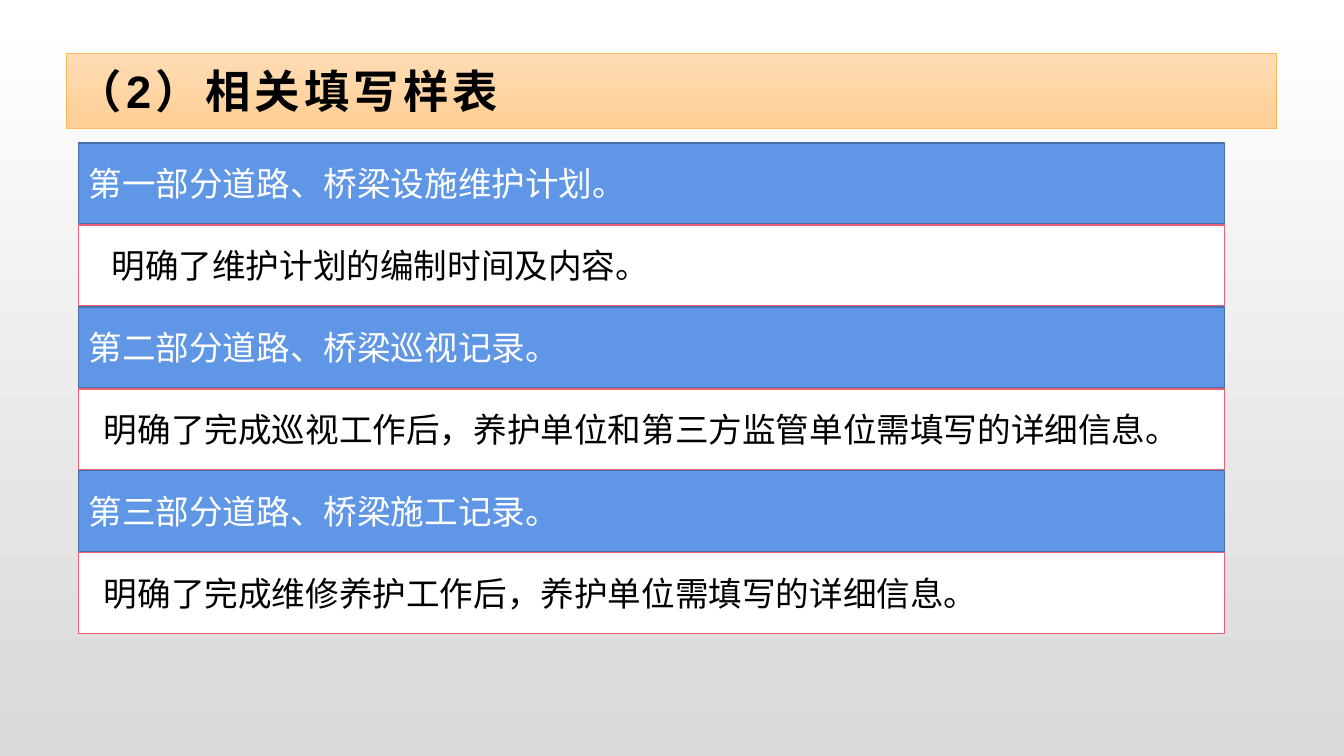
from dataclasses import dataclass

from pptx import Presentation
from pptx.dml.color import RGBColor
from pptx.enum.shapes import MSO_SHAPE
from pptx.enum.text import MSO_ANCHOR, PP_ALIGN
from pptx.util import Pt


@dataclass(frozen=True)
class Theme:
    font: str = "Arial"
    title_size: float = 32.4
    body_size: float = 24
    white: str = "FFFFFF"
    black: str = "000000"
    page_bottom: str = "D9D9D9"
    title_top: str = "FFDCB4"
    title_bottom: str = "FFCF95"
    title_line: str = "FFBA55"
    heading_fill: str = "6096E6"
    heading_line: str = "476FAA"
    detail_line: str = "EC5F74"


class SlideBuilder:
    def __init__(self, page, theme):
        self.page = page
        self.theme = theme

    def gradient(self, fill, top, bottom):
        fill.gradient()
        fill.gradient_angle = 270
        for stop, color in zip(fill.gradient_stops, (top, bottom)):
            stop.color.rgb = RGBColor.from_string(color)

    def background(self):
        self.gradient(self.page.background.fill, self.theme.white, self.theme.page_bottom)

    def box(self, left, top, width, height, line, line_width):
        box = self.page.shapes.add_shape(
            MSO_SHAPE.RECTANGLE, Pt(left), Pt(top), Pt(width), Pt(height)
        )
        box.shadow.inherit = False
        box.line.color.rgb = RGBColor.from_string(line)
        box.line.width = Pt(line_width)
        return box

    def label(self, box, text, size, color, indent=0):
        frame = box.text_frame
        frame.word_wrap = True
        frame.vertical_anchor = MSO_ANCHOR.MIDDLE
        frame.margin_left = Pt(7.2 + indent)
        frame.text = text
        para = frame.paragraphs[0]
        para.alignment = PP_ALIGN.LEFT
        span = para.runs[0]
        span.font.name = self.theme.font
        span.font.size = Pt(size)
        span.font.color.rgb = RGBColor.from_string(color)
        return span

    def title(self, text):
        theme = self.theme
        box = self.box(47.7, 38.2, 864, 53.3, theme.title_line, 0.5)
        self.gradient(box.fill, theme.title_top, theme.title_bottom)
        span = self.label(box, text, theme.title_size, theme.black)
        span.font.bold = True
        span._r.get_or_add_rPr().set("spc", "300")

    def row(self, top, text, fill, line, color, indent=0):
        box = self.box(56.2, top, 818.6, 57.6, line, 1)
        box.fill.solid()
        box.fill.fore_color.rgb = RGBColor.from_string(fill)
        self.label(box, text, self.theme.body_size, color, indent)

    def heading(self, top, text):
        theme = self.theme
        self.row(top, text, theme.heading_fill, theme.heading_line, theme.white)

    def detail(self, top, text, indent):
        theme = self.theme
        self.row(top, text, theme.white, theme.detail_line, theme.black, indent)


SECTIONS = [
    ("第一部分道路、桥梁设施维护计划。", "明确了维护计划的编制时间及内容。", 16.2),
    (
        "第二部分道路、桥梁巡视记录。",
        "明确了完成巡视工作后，养护单位和第三方监管单位需填写的详细信息。",
        10.8,
    ),
    (
        "第三部分道路、桥梁施工记录。",
        "明确了完成维修养护工作后，养护单位需填写的详细信息。",
        10.8,
    ),
]
FIRST_TOP = 102.3
ROW_STEP = 58.5


def main():
    deck = Presentation()
    deck.slide_width, deck.slide_height = Pt(960), Pt(540)
    page = deck.slides.add_slide(deck.slide_layouts[6])
    builder = SlideBuilder(page, Theme())
    builder.background()
    builder.title("（2）相关填写样表")
    for index, (heading, detail, indent) in enumerate(SECTIONS):
        top = FIRST_TOP + 2 * index * ROW_STEP
        builder.heading(top, heading)
        builder.detail(top + ROW_STEP, detail, indent)
    deck.save("out.pptx")


if __name__ == "__main__":
    main()
